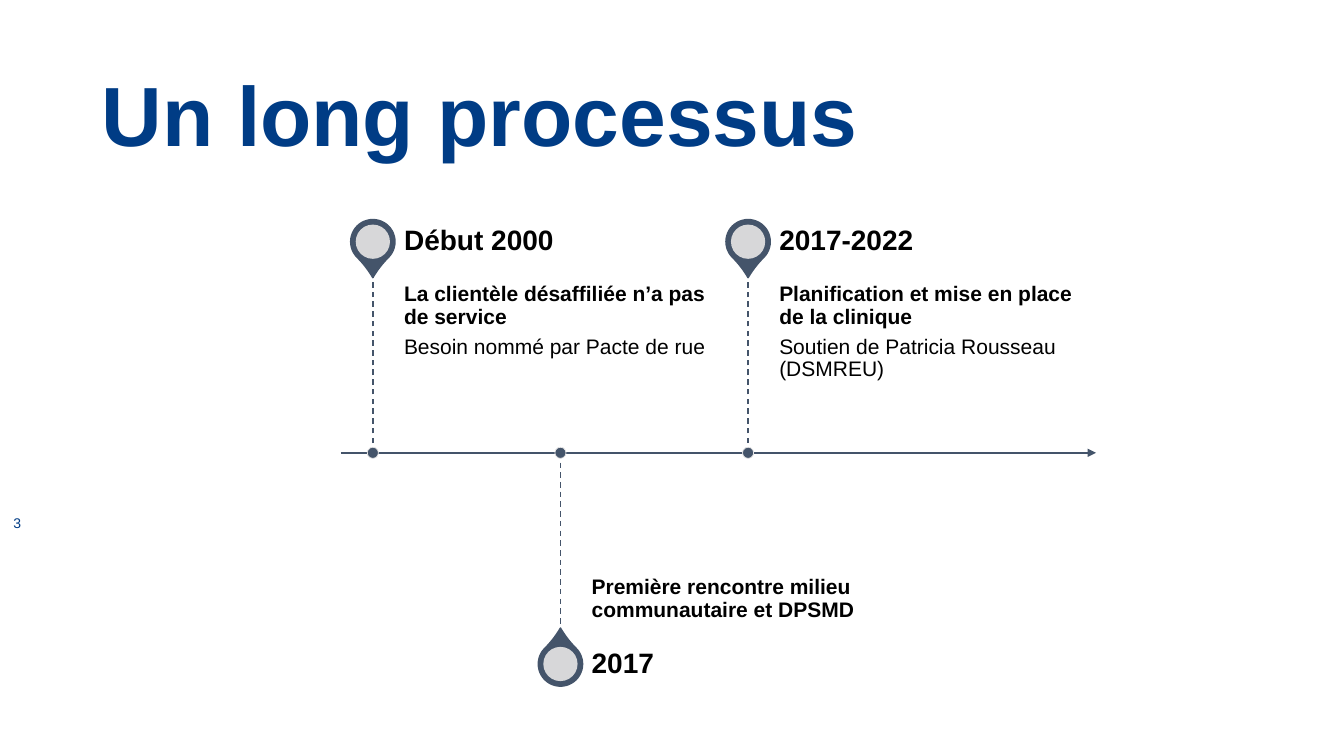
"""Build a timeline slide with pins placed alternately above and below an axis."""
from lxml import etree
from pptx import Presentation
from pptx import util as u
from pptx.dml.color import RGBColor
from pptx.enum import dml, shapes, text
from pptx.oxml.ns import qn

TITLE = "Un long processus"
NUMBER = "3"
EVENTS = [
    ("Début 2000", ["La clientèle désaffiliée n’a pas de service",
                    "Besoin nommé par Pacte de rue"]),
    ("2017", ["Première rencontre milieu communautaire et DPSMD"]),
    ("2017-2022", ["Planification et mise en place de la clinique",
                   "Soutien de Patricia Rousseau (DSMREU)"]),
]

NAVY = RGBColor(0x00, 0x3C, 0x85)
SLATE = RGBColor(0x44, 0x54, 0x6A)
PALE = RGBColor(0xE7, 0xE6, 0xE6)
BLACK = RGBColor(0, 0, 0)
FONT = "Arial"
SHAPE = shapes.MSO_SHAPE
ANCHOR = text.MSO_ANCHOR

deck = Presentation()
deck.slide_width, deck.slide_height = u.Inches(13.33), u.Inches(7.5)
slide = deck.slides.add_slide(deck.slide_layouts[5])


def across(share):
    """Turn a percentage of the slide's width into a length."""
    return round(deck.slide_width * share / 100)


def down(share):
    """Turn a percentage of the slide's height into a length."""
    return round(deck.slide_height * share / 100)


AXIS = down(59.9)
START, END = across(25.36), across(81.55)
FIRST, STEP = across(27.74), across(13.96)
GAP, WIDE = across(2.32), across(23.4)
BODY, HEAD = down(23.73), down(8.4)
PIN, DISC, DOT = across(3.3), across(2.55), across(0.83)


def write(lines, at=None, box=None, size=15, color=BLACK, bold=1, anchor=ANCHOR.TOP,
          align=text.PP_ALIGN.LEFT, inset=(0.1, 0.05, 0.1, 0.05), space=0.9, after=0):
    """Put lines in a new or given box; the first `bold` lines are bold."""
    box = box or slide.shapes.add_textbox(*at)
    frame = box.text_frame
    frame.word_wrap = True
    frame.auto_size = text.MSO_AUTO_SIZE.NONE
    frame.vertical_anchor = anchor
    (frame.margin_left, frame.margin_top,
     frame.margin_right, frame.margin_bottom) = map(u.Inches, inset)
    frame.text = "\n".join(lines)
    for i, para in enumerate(frame.paragraphs):
        para.alignment, para.line_spacing = align, space
        para.space_before, para.space_after = u.Pt(0), u.Pt(after)
        font = para.runs[0].font
        font.name, font.size, font.bold = FONT, u.Pt(size), i < bold
        font.color.rgb = color


def line(x1, y1, x2, y2, width, dash=None, arrow=False):
    """Draw a slate line, dashed or with an arrowhead if asked."""
    link = slide.shapes.add_connector(shapes.MSO_CONNECTOR.STRAIGHT, x1, y1, x2, y2)
    link.line.color.rgb, link.line.width = SLATE, u.Pt(width)
    if dash:
        link.line.dash_style = dash
    if arrow:
        etree.SubElement(link.line._get_or_add_ln(), qn("a:tailEnd"), type="triangle")
    etree.SubElement(link._element.spPr, qn("a:effectLst"))


def mark(kind, x, y, size, fill, edge=None, width=1):
    """Draw a filled shape centred on a point."""
    item = slide.shapes.add_shape(kind, x - size // 2, y - size // 2, size, size)
    item.shadow.inherit = False
    item.fill.solid()
    item.fill.fore_color.rgb = fill
    if edge:
        item.line.color.rgb, item.line.width = edge, u.Pt(width)
    else:
        item.line.fill.background()
    return item


def event(x, below, head, lines):
    """Draw one event: pin, texts, dashed stem and dot."""
    body_top = AXIS if below else AXIS - BODY
    head_top = AXIS + BODY if below else body_top - HEAD
    mid = head_top + HEAD // 2
    drop = mark(SHAPE.TEAR, x, mid, PIN, SLATE, SLATE)
    drop.adjustments[0] = 1.15
    drop.rotation = 315 if below else 135
    disc = mark(SHAPE.OVAL, x, mid, DISC, PALE)
    tint = disc._element.spPr.find(qn("a:solidFill"))[0]
    etree.SubElement(tint, qn("a:alpha"), val="90000")
    write(lines, (x + GAP, body_top, WIDE, BODY), after=5,
          anchor=ANCHOR.BOTTOM if below else ANCHOR.TOP,
          inset=(0, 0.16, 0, 0.1) if below else (0, 0.1, 0.1, 0.16))
    write([head], (x + GAP, head_top, WIDE, HEAD), size=20,
          anchor=ANCHOR.MIDDLE, inset=(0, 0, 0.14, 0))
    line(x, AXIS, x, AXIS + BODY if below else body_top, 1, dml.MSO_LINE.DASH)
    mark(SHAPE.OVAL, x, AXIS, DOT, SLATE, PALE, 0.5)


title = slide.shapes.title
title.left, title.top = across(6.83), down(7.07)
title.width, title.height = across(58.29), down(15.33)
write([TITLE], box=title, size=60, color=NAVY, anchor=ANCHOR.BOTTOM)
write([NUMBER], (0, down(66.53), across(2.55), down(5.33)), size=10, color=NAVY,
      bold=0, anchor=ANCHOR.MIDDLE, align=text.PP_ALIGN.CENTER, space=1.0)
line(START, AXIS, END, AXIS, 1.5, arrow=True)
for i, (head, lines) in enumerate(EVENTS):
    event(FIRST + i * STEP, i % 2 == 1, head, lines)

deck.save("out.pptx")
